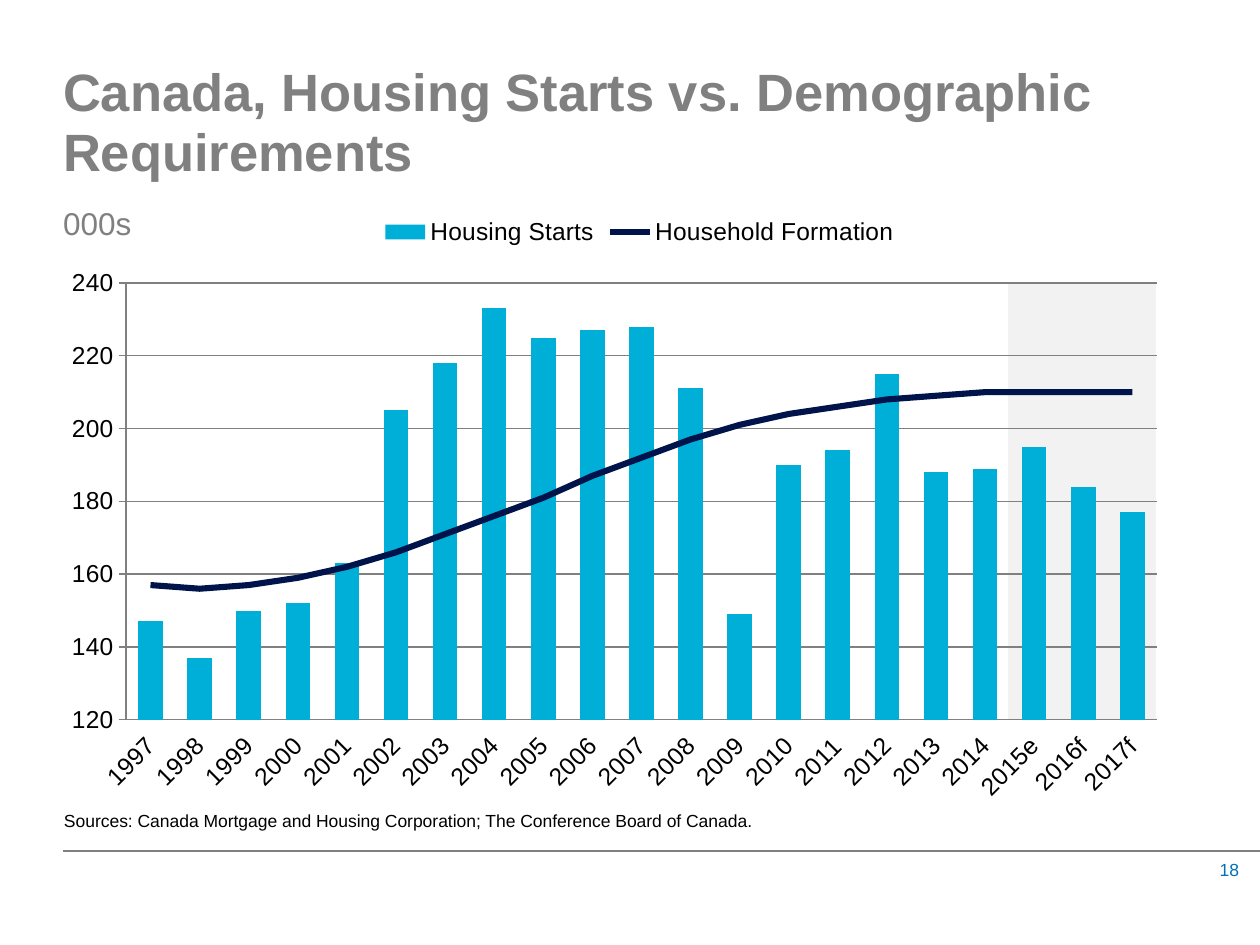
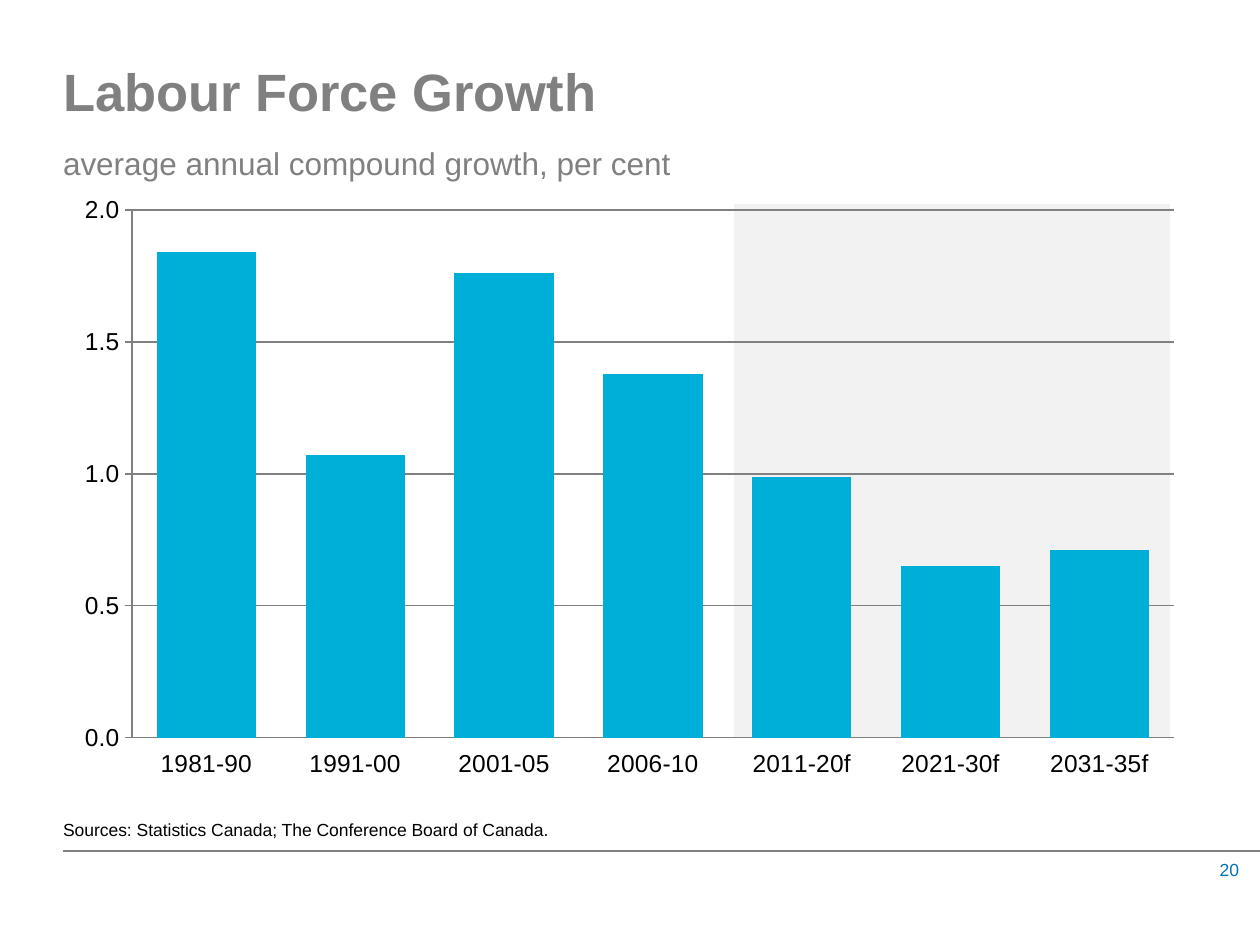
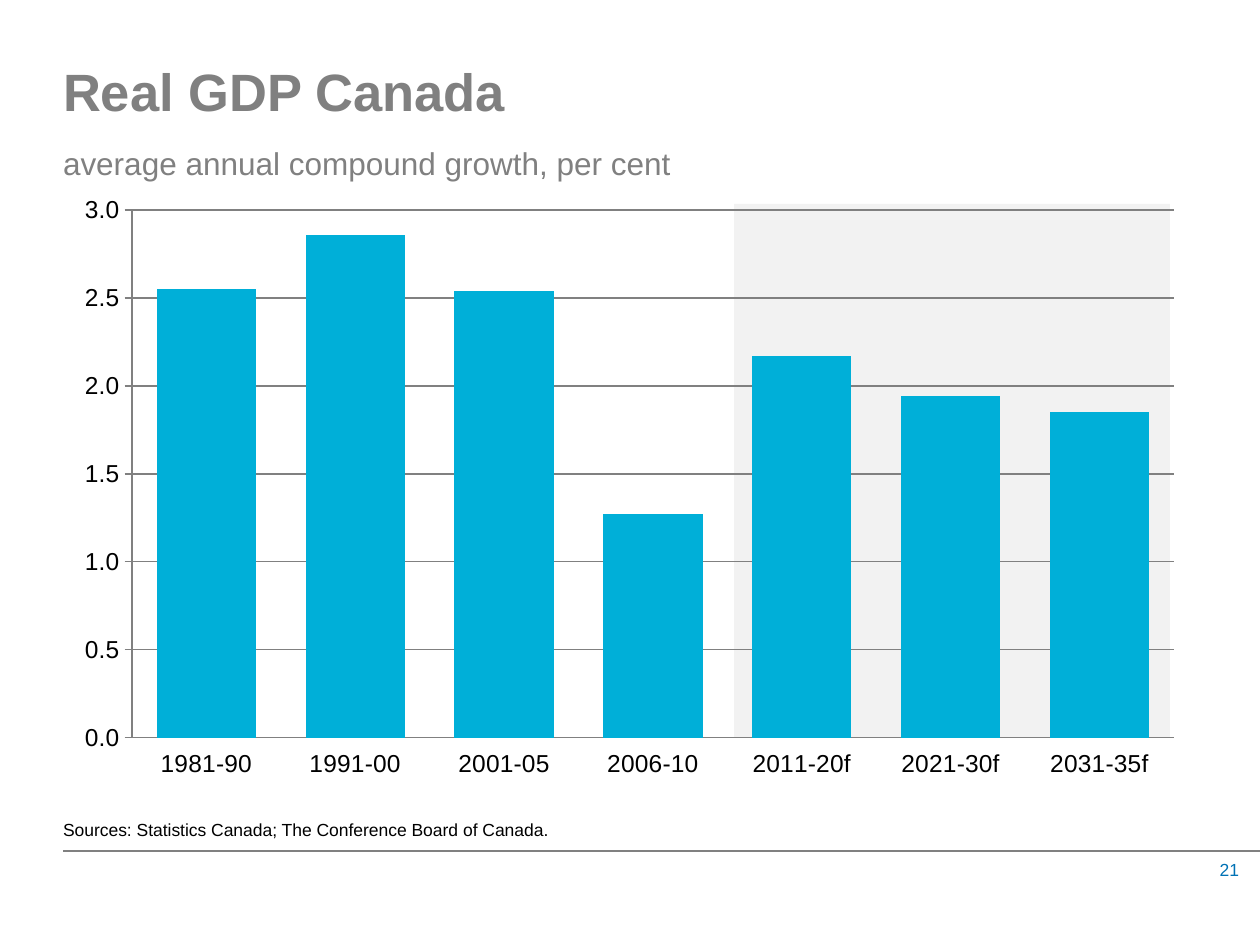
from lxml import etree
from pptx import Presentation
from pptx.chart.data import CategoryChartData
from pptx.dml.color import RGBColor
from pptx.enum.chart import (XL_CHART_TYPE, XL_LEGEND_POSITION, XL_MARKER_STYLE,
                             XL_TICK_LABEL_POSITION, XL_TICK_MARK)
from pptx.enum.shapes import MSO_CONNECTOR, MSO_SHAPE
from pptx.enum.text import MSO_ANCHOR, MSO_AUTO_SIZE, PP_ALIGN
from pptx.oxml import parse_xml
from pptx.oxml.ns import nsdecls, qn
from pptx.util import Emu, Pt

COLUMNS = XL_CHART_TYPE.COLUMN_CLUSTERED
LEGEND_TOP = XL_LEGEND_POSITION.TOP
NO_MARKER = XL_MARKER_STYLE.NONE
LABELS_LOW = XL_TICK_LABEL_POSITION.LOW
TICK_NONE, TICK_OUT = XL_TICK_MARK.NONE, XL_TICK_MARK.OUTSIDE
STRAIGHT, RECTANGLE = MSO_CONNECTOR.STRAIGHT, MSO_SHAPE.RECTANGLE
TOP, NO_FIT = MSO_ANCHOR.TOP, MSO_AUTO_SIZE.NONE
LEFT, RIGHT = PP_ALIGN.LEFT, PP_ALIGN.RIGHT

FONT = "Arial"
GRAY = RGBColor(0x80, 0x80, 0x80)
BLACK = RGBColor(0x00, 0x00, 0x00)
PAGE_BLUE = RGBColor(0x00, 0x72, 0xB5)
BAR_BLUE = RGBColor(0x00, 0xAF, 0xD8)
NAVY = RGBColor(0x00, 0x13, 0x4A)
FORECAST_GRAY = RGBColor(0xF2, 0xF2, 0xF2)

PERIODS = ["1981-90", "1991-00", "2001-05", "2006-10", "2011-20f", "2021-30f", "2031-35f"]
YEARS = [str(year) for year in range(1997, 2015)] + ["2015e", "2016f", "2017f"]
STARTS = [147, 137, 150, 152, 163, 205, 218, 233, 225, 227, 228,
          211, 149, 190, 194, 215, 188, 189, 195, 184, 177]
HOUSEHOLDS = [157, 156, 157, 159, 162, 166, 171, 176, 181, 187, 192,
              197, 201, 204, 206, 208, 209, 210, 210, 210, 210]

# Frames are left, top, width, height in px
YEARLY = dict(
    categories=YEARS, chart_frame=(54, 204, 1171, 625), plot_frame=(126, 283, 1031, 437),
    band_frame=(1008, 283, 148, 436), gap=100, angle=-45, number_format="#,##0",
    source_frame=(64, 810, 1119, 32),
    sources="Sources: Canada Mortgage and Housing Corporation; The Conference Board of Canada.")
BY_PERIOD = dict(
    categories=PERIODS, chart_frame=(63, 185, 1134, 605), plot_frame=(132, 210, 1042, 528),
    band_frame=(734, 204, 436, 534), gap=50, angle=0, number_format="#,##0.0",
    source_frame=(63, 819, 1119, 32), subtitle="average annual compound growth, per cent",
    sources="Sources: Statistics Canada; The Conference Board of Canada.")
PAGES = [
    dict(YEARLY, number="18", title="Canada, Housing Starts vs. Demographic Requirements",
         subtitle="000s", scale=(120, 240, 20),
         series={"Housing Starts": STARTS, "Household Formation": HOUSEHOLDS}),
    dict(BY_PERIOD, number="20", title="Labour Force Growth", scale=(0, 2, 0.5),
         series={"Series 1": [1.84, 1.07, 1.76, 1.38, 0.99, 0.65, 0.71]}),
    dict(BY_PERIOD, number="21", title="Real GDP Canada", scale=(0, 3, 0.5),
         series={"Series 1": [2.55, 2.86, 2.54, 1.27, 2.17, 1.94, 1.85]}),
]


def px(*lengths):
    return [Emu(round(length * 914400 / 126)) for length in lengths]


def write(box, frame, spans, align=LEFT):
    """Place a text box and fill its one paragraph, one line per span."""
    box.left, box.top, box.width, box.height = px(*frame)
    text = box.text_frame
    text.word_wrap = True
    text.auto_size = NO_FIT
    text.vertical_anchor = TOP
    text.margin_left = text.margin_top = text.margin_right = text.margin_bottom = 0
    para = text.paragraphs[0]
    para.alignment = align
    para.space_before = Pt(0)
    for index, (words, size, color, bold) in enumerate(spans):
        if index:
            para.add_line_break()
        span = para.add_run()
        span.text = words
        span.font.name, span.font.size, span.font.bold = FONT, Pt(size), bold
        span.font.color.rgb = color
    return para


deck = Presentation()
deck.slide_width, deck.slide_height = px(1260, 945)

for page in PAGES:
    slide = deck.slides.add_slide(deck.slide_layouts[1])
    shapes = slide.shapes

    # Title with its unit line
    para = write(shapes.title, (63, 63, 1134, 122),
                 [(page["title"], 30, GRAY, True), (page["subtitle"], 18, GRAY, False)])
    para.line_spacing = Pt(34)

    # Sources, with a hanging indent and no bullet
    para = write(slide.placeholders[1], page["source_frame"],
                 [(page["sources"], 10, BLACK, False)])
    properties = para._p.get_or_add_pPr()
    indent = px(48)[0]
    properties.set("marL", str(indent))
    properties.set("indent", str(-indent))
    etree.SubElement(properties, qn("a:buNone"))

    # Footer rule and page number
    rule = shapes.add_connector(STRAIGHT, *px(63, 851, 1260, 851))
    rule.line.color.rgb = GRAY
    rule.line.width = Pt(0.75)
    etree.SubElement(rule._element.spPr, qn("a:effectLst"))
    write(shapes.add_textbox(0, 0, 0, 0), (1197, 859, 42, 21),
          [(page["number"], 10, PAGE_BLUE, False)], RIGHT)

    # Forecast band behind the chart
    band = shapes.add_shape(RECTANGLE, *px(*page["band_frame"]))
    band.shadow.inherit = False
    band.fill.solid()
    band.fill.fore_color.rgb = FORECAST_GRAY
    band.line.fill.background()

    # Chart
    data = CategoryChartData()
    data.categories = page["categories"]
    for name, values in page["series"].items():
        data.add_series(name, values)
    chart = shapes.add_chart(COLUMNS, *px(*page["chart_frame"]), data).chart
    chart.has_title = False
    chart.font.name, chart.font.size = FONT, Pt(14)
    chart.font.color.rgb = BLACK
    chart.has_legend = len(page["series"]) > 1
    if chart.has_legend:
        chart.legend.position = LEGEND_TOP
        chart.legend.include_in_layout = False
        chart.legend.font.size = Pt(14)

    columns = chart.plots[0]
    columns.vary_by_categories = False
    columns.gap_width = page["gap"]
    fill = columns.series[0].format.fill
    fill.solid()
    fill.fore_color.rgb = BAR_BLUE

    # Axes
    category_axis, value_axis = chart.category_axis, chart.value_axis
    category_axis.major_tick_mark = TICK_NONE
    category_axis.tick_label_position = LABELS_LOW
    value_axis.major_tick_mark = TICK_OUT
    value_axis.minimum_scale, value_axis.maximum_scale, value_axis.major_unit = page["scale"]
    value_axis.tick_labels.number_format = page["number_format"]
    value_axis.tick_labels.number_format_is_linked = False
    value_axis.has_major_gridlines = True
    for part in (category_axis, value_axis, value_axis.major_gridlines):
        part.format.line.color.rgb = GRAY
        part.format.line.width = Pt(0.75)
    for axis in (category_axis, value_axis):
        axis.tick_labels.font.size = Pt(14)
    label_body = category_axis._element.find(qn("c:txPr")).find(qn("a:bodyPr"))
    label_body.set("rot", str(page["angle"] * 60000))

    # Second series drawn as a line on the same axes
    plot_area = chart._chartSpace.chart.plotArea
    if len(page["series"]) > 1:
        bar_chart = plot_area.find(qn("c:barChart"))
        line_chart = parse_xml(
            f'<c:lineChart {nsdecls("c")}><c:grouping val="standard"/>'
            '<c:varyColors val="0"/><c:marker val="1"/></c:lineChart>')
        moved = bar_chart.findall(qn("c:ser"))[1]
        for bar_setting in moved.findall(qn("c:invertIfNegative")):
            moved.remove(bar_setting)
        line_chart.insert(2, moved)
        for axis_id in bar_chart.findall(qn("c:axId")):
            etree.SubElement(line_chart, qn("c:axId"), val=axis_id.get("val"))
        bar_chart.addnext(line_chart)
        trend = chart.plots[1].series[0]
        trend.format.line.color.rgb = NAVY
        trend.format.line.width = Pt(3.5)
        trend.marker.style = NO_MARKER
        trend.smooth = False

    # Fixed plot position and clear backgrounds, so the band shows through
    left, top, width, height = page["chart_frame"]
    plot_left, plot_top, plot_width, plot_height = page["plot_frame"]
    for old_layout in plot_area.findall(qn("c:layout")):
        plot_area.remove(old_layout)
    layout = etree.Element(qn("c:layout"))
    manual = etree.SubElement(layout, qn("c:manualLayout"))
    for tag, value in (("layoutTarget", "inner"), ("xMode", "edge"), ("yMode", "edge"),
                       ("x", (plot_left - left) / width), ("y", (plot_top - top) / height),
                       ("w", plot_width / width), ("h", plot_height / height)):
        etree.SubElement(manual, qn("c:" + tag), val=str(value))
    plot_area.insert(0, layout)
    clear = (f'<c:spPr {nsdecls("c", "a")}><a:noFill/>'
             '<a:ln><a:noFill/></a:ln></c:spPr>')
    plot_area.append(parse_xml(clear))
    chart._chartSpace.chart.addnext(parse_xml(clear))

deck.save("out.pptx")
